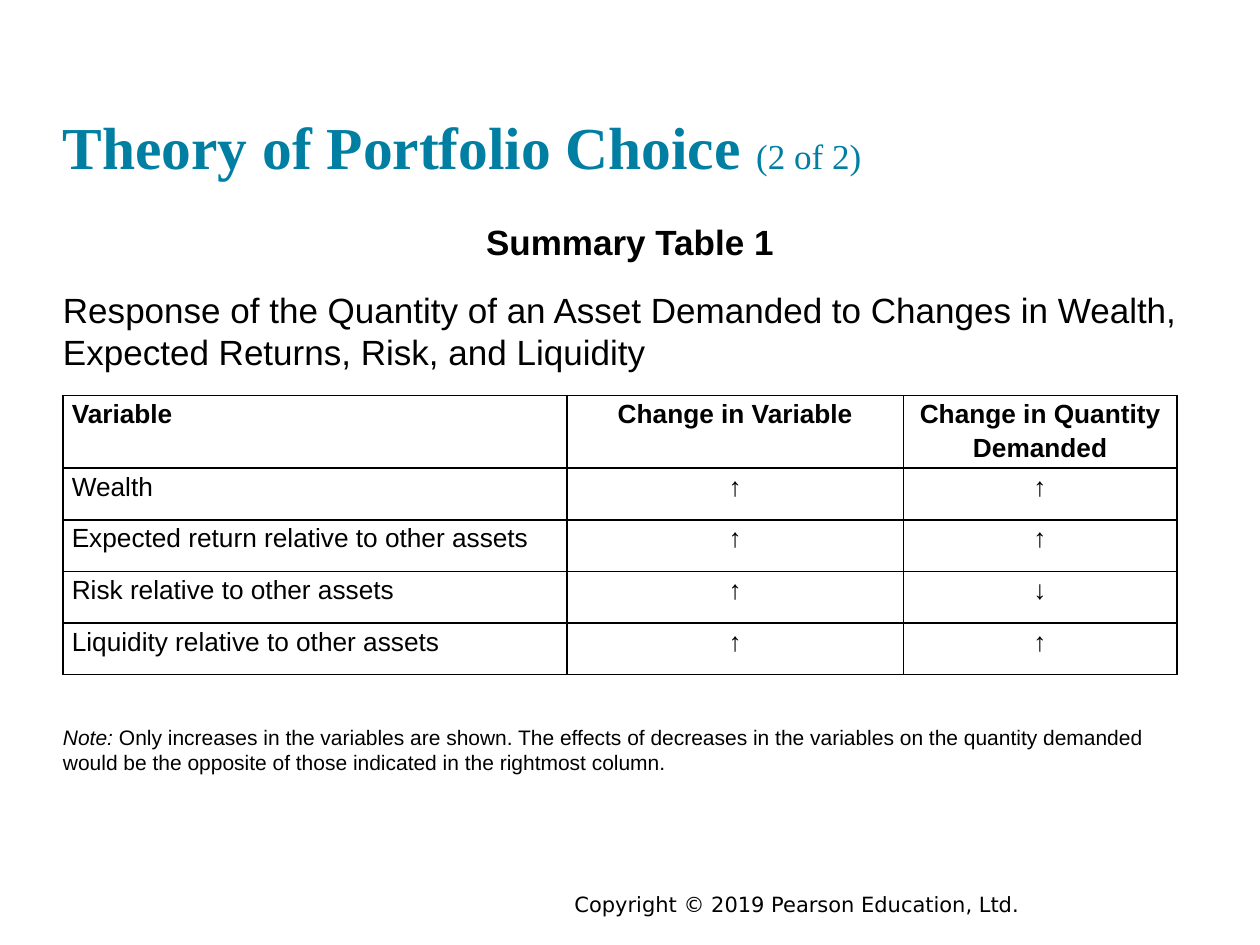
from lxml import etree
from pptx import Presentation
from pptx import util as u
from pptx.dml.color import RGBColor
from pptx.enum import text
from pptx.oxml.ns import qn

WIDTH, HEIGHT = 10, 7.5
MARGIN = 0.05 * WIDTH
BODY_WIDTH = WIDTH - 2 * MARGIN
BLACK, TEAL = "000000", "007FA3"
LEFT, CENTER = text.PP_ALIGN.LEFT, text.PP_ALIGN.CENTER

TITLE = [(LEFT, [("Theory of Portfolio Choice ", 34, "b"), ("(2 of 2)", 20, "")])]
INTRO = [
    (CENTER, [("Summary Table 1", 20, "b")]),
    (LEFT, [("Response of the Quantity of an Asset Demanded to Changes in Wealth, "
             "Expected Returns, Risk, and Liquidity", 20, "")]),
]
NOTE = [(LEFT, [
    ("Note: ", 12, "i"),
    ("Only increases in the variables are shown. The effects of decreases in the "
     "variables on the quantity demanded would be the opposite of those indicated "
     "in the rightmost column.", 12, ""),
])]
COPYRIGHT = [(CENTER, [("Copyright © 2019 Pearson Education, Ltd.", 12, "")])]

RESPONSES = [
    ("Variable", "Change in Variable", "Change in Quantity Demanded"),
    ("Wealth", "↑", "↑"),
    ("Expected return relative to other assets", "↑", "↑"),
    ("Risk relative to other assets", "↑", "↓"),
    ("Liquidity relative to other assets", "↑", "↑"),
]
COLUMN_WIDTHS = (4, 2.67, 2.17)
ROW_HEIGHT = 0.41


def color(value):
    return RGBColor.from_string(value)


def add_run(paragraph, words, size, style, face="Arial", ink=BLACK):
    run = paragraph.add_run()
    run.text = words
    run.font.size = u.Pt(size)
    run.font.name = face
    run.font.bold = "b" in style
    run.font.italic = "i" in style
    run.font.color.rgb = color(ink)


def add_text(slide, place, paragraphs, face="Arial", ink=BLACK,
             anchor=text.MSO_ANCHOR.TOP, insets=(0, 0)):
    frame = slide.shapes.add_textbox(*map(u.Inches, place)).text_frame
    frame.word_wrap = True
    frame.vertical_anchor = anchor
    frame.margin_left = frame.margin_right = u.Inches(insets[0])
    frame.margin_top = frame.margin_bottom = u.Inches(insets[1])
    for index, (align, runs) in enumerate(paragraphs):
        paragraph = frame.add_paragraph() if index else frame.paragraphs[0]
        paragraph.alignment = align
        if index:
            paragraph.space_before = u.Pt(15)
        for words, size, style in runs:
            add_run(paragraph, words, size, style, face, ink)


def add_borders(cell):
    properties = cell._tc.get_or_add_tcPr()
    for position, side in enumerate(("a:lnL", "a:lnR", "a:lnT", "a:lnB")):
        line = etree.Element(qn(side), w=str(u.Pt(1)))
        fill = etree.SubElement(line, qn("a:solidFill"))
        etree.SubElement(fill, qn("a:srgbClr"), val=BLACK)
        properties.insert(position, line)


def add_responses(slide, left, top):
    table = slide.shapes.add_table(
        len(RESPONSES), len(COLUMN_WIDTHS), u.Inches(left), u.Inches(top),
        u.Inches(sum(COLUMN_WIDTHS)), u.Inches(ROW_HEIGHT * len(RESPONSES))).table
    table.horz_banding = False
    for column, width in zip(table.columns, COLUMN_WIDTHS):
        column.width = u.Inches(width)
    for row, entries in enumerate(RESPONSES):
        for column, entry in enumerate(entries):
            cell = table.cell(row, column)
            cell.fill.background()
            cell.margin_left = cell.margin_right = u.Inches(0.07)
            cell.margin_top = cell.margin_bottom = 0
            paragraph = cell.text_frame.paragraphs[0]
            paragraph.alignment = CENTER if column else LEFT
            paragraph.line_spacing = 1.15
            add_run(paragraph, entry, 15, "" if row else "b")
            add_borders(cell)


def main():
    deck = Presentation()
    deck.slide_width, deck.slide_height = u.Inches(WIDTH), u.Inches(HEIGHT)
    slide = deck.slides.add_slide(deck.slide_layouts[6])
    add_text(slide, (2.95, 7.03, 6.75, 0.3), COPYRIGHT, face="DejaVu Sans",
             insets=(0.1, 0.05))
    add_text(slide, (MARGIN, 0.24, BODY_WIDTH, 1.2), TITLE, "Times New Roman", TEAL,
             text.MSO_ANCHOR.BOTTOM)
    add_text(slide, (MARGIN, 1.75, BODY_WIDTH, 1.25), INTRO)
    add_responses(slide, MARGIN, 3.14)
    add_text(slide, (MARGIN, 5.75, BODY_WIDTH, 0.53), NOTE)
    deck.save("out.pptx")


if __name__ == "__main__":
    main()
